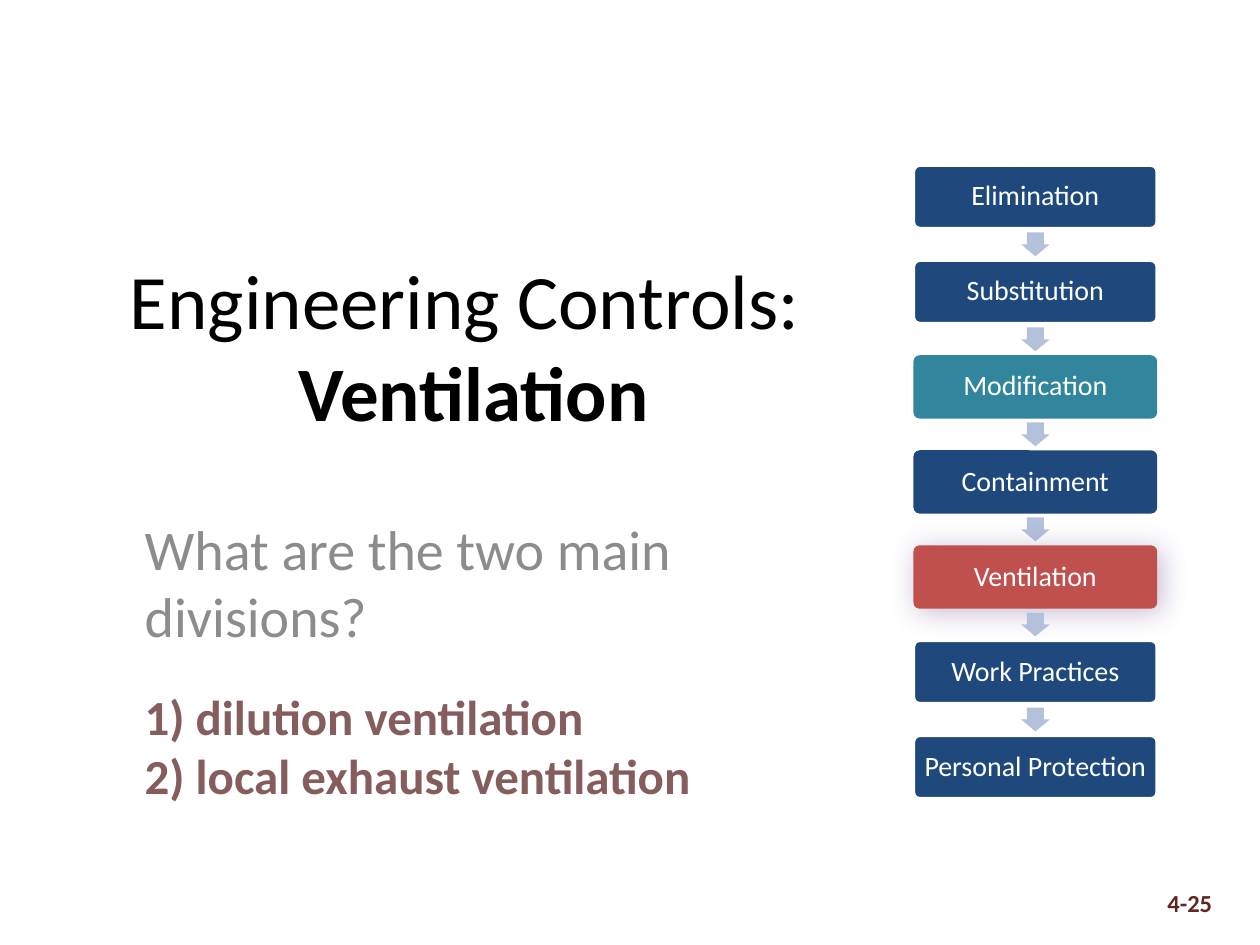
from lxml.etree import SubElement
from pptx import Presentation
from pptx.dml.color import RGBColor
from pptx.enum.shapes import MSO_SHAPE
from pptx.enum.text import MSO_ANCHOR, PP_ALIGN
from pptx.oxml.ns import qn
from pptx.util import Pt


def color(value):
    return RGBColor.from_string(value)


class Deck:
    """Holds the style and the current slide."""
    font = "Calibri"
    navy, teal, red = "1F497D", "31859C", "C0504D"
    white, arrow_fill, glow = "FFFFFF", "B3C1DB", "8064A2"

    def __init__(self, prs):
        self.slide = prs.slides.add_slide(prs.slide_layouts[6])

    def fill_text(self, tf, runs, hue, size, align=PP_ALIGN.LEFT,
                  anchor=MSO_ANCHOR.TOP, inset=None):
        """Fill a frame; runs is a list of paragraphs of (text, bold) pairs."""
        frame = {"word_wrap": True, "vertical_anchor": anchor}
        if inset is not None:
            sides = ("left", "right", "top", "bottom")
            frame.update({f"margin_{side}": Pt(inset) for side in sides})
        for name, value in frame.items():
            setattr(tf, name, value)
        for i, parts in enumerate(runs):
            p = tf.paragraphs[0] if i == 0 else tf.add_paragraph()
            p.alignment = align
            for j, (text, bold) in enumerate(parts):
                if j:
                    p.add_line_break()
                r = p.add_run()
                r.text = text
                fmt = {"name": self.font, "size": Pt(size), "bold": bold}
                for name, value in fmt.items():
                    setattr(r.font, name, value)
                r.font.color.rgb = color(hue)

    def text(self, box, runs, hue, size, **fmt):
        sp = self.slide.shapes.add_textbox(*map(Pt, box))
        self.fill_text(sp.text_frame, runs, hue, size, **fmt)

    def shape(self, kind, box, fill, adjustments):
        sp = self.slide.shapes.add_shape(kind, *map(Pt, box))
        sp.shadow.inherit = False
        sp.fill.solid()
        sp.fill.fore_color.rgb = color(fill)
        sp.line.fill.background()
        for i, value in enumerate(adjustments):
            sp.adjustments[i] = value
        return sp

    def step(self, box, label, fill, outlined, shadowed):
        sp = self.shape(MSO_SHAPE.ROUNDED_RECTANGLE, box, fill, [0.1])
        if outlined:
            sp.line.color.rgb = color(self.white)
            sp.line.width = Pt(2)
        if shadowed:
            self.add_shadow(sp)
        self.fill_text(sp.text_frame, [[(label, False)]], self.white, 16,
                       align=PP_ALIGN.CENTER, anchor=MSO_ANCHOR.MIDDLE, inset=5)
        sp.text_frame.paragraphs[0].line_spacing = 0.9

    def add_shadow(self, sp):
        effects = sp._element.spPr.find(qn("a:effectLst"))
        shadow = SubElement(effects, qn("a:outerShdw"), blurRad=str(Pt(16.2)),
                            dist=str(Pt(3)), dir=str(45 * 60000),
                            rotWithShape="0")
        hue = SubElement(shadow, qn("a:srgbClr"), val=self.glow)
        SubElement(hue, qn("a:alpha"), val="43000")

    def down_arrow(self, center_x, center_y, length=13.6, breadth=16.3):
        box = (center_x - length / 2, center_y - breadth / 2, length, breadth)
        sp = self.shape(MSO_SHAPE.RIGHT_ARROW, box, self.arrow_fill, [0.6, 0.5])
        sp.rotation = 90


def main():
    prs = Presentation()
    prs.slide_width, prs.slide_height = Pt(720), Pt(540)
    s = Deck(prs)

    # Title, question and answers
    s.text((-35.3, 139, 612, 116),
           [[("Engineering Controls: ", False), ("Ventilation", True)]],
           "000000", 44, align=PP_ALIGN.CENTER, anchor=MSO_ANCHOR.MIDDLE)
    s.text((75.6, 290.2, 422, 138),
           [[("What are the two main divisions?", False)]], "8C8C8C", 32)
    s.text((75.6, 388.8, 545, 75),
           [[("1) dilution ventilation", True)],
            [("2) local exhaust ventilation", True)]], "855D5D", 28)

    # Chain of control steps: label, fill, outlined, shadowed
    steps = [
        ("Elimination", s.navy, True, False),
        ("Substitution", s.navy, True, False),
        ("Modification", s.teal, False, False),
        ("Containment", s.navy, False, False),
        ("Ventilation", s.red, False, True),
        ("Work Practices", s.navy, True, False),
        ("Personal Protection", s.navy, True, False),
    ]
    left, top, width, height, pitch = 522, 94.4, 139.3, 36.2, 54.3
    for i, step in enumerate(steps):
        y = top + i * pitch
        s.step((left, y, width, height), *step)
        if i < len(steps) - 1:
            s.down_arrow(left + width / 2, y + (height + pitch) / 2)

    # Page number
    s.text((649.4, 504, 50.4, 21), [[("4-25", True)]], "632523", 14,
           align=PP_ALIGN.RIGHT)

    prs.save("out.pptx")


if __name__ == "__main__":
    main()
